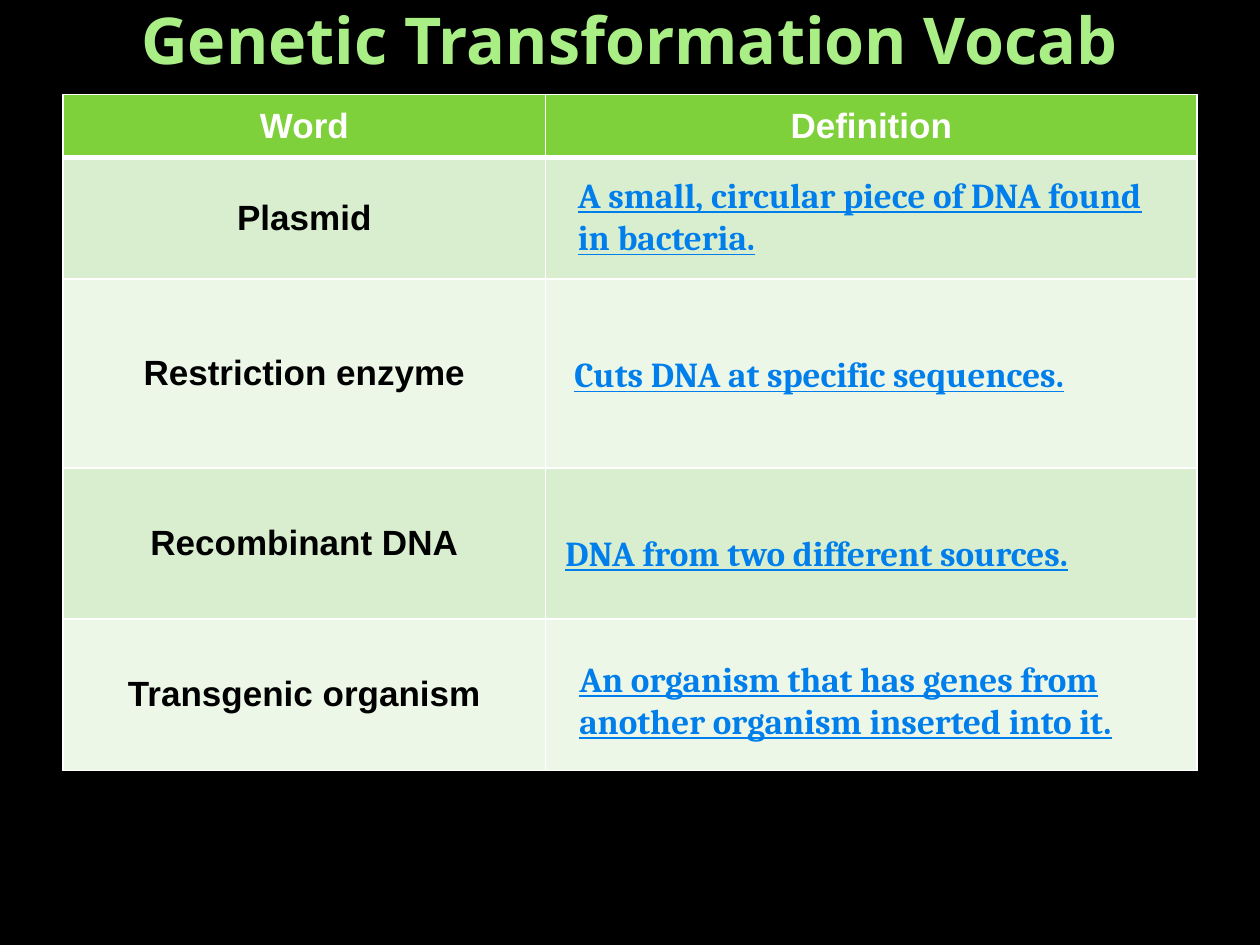
from pptx import Presentation
from pptx.dml.color import RGBColor
from pptx.enum.text import MSO_ANCHOR as Anchor, MSO_AUTO_SIZE as AutoSize, PP_ALIGN as Align
from pptx.oxml import parse_xml
from pptx.oxml.ns import nsdecls
from pptx.util import Cm, Pt

THEME = {
    "background": "000000", "title": "A9EF86", "header": "7FD13B",
    "bands": ["D8EECE", "ECF7E8"], "border": "FFFFFF",
    "header_text": "FFFFFF", "word_text": "000000", "definition_text": "007EEB",
    "title_size": 36.9, "text_size": 20, "border_width": 1, "header_rule": 3,
}
COLUMNS = [9.73, 13.13]
HEADINGS = ["Word", "Definition"]
VOCABULARY = [
    ("Plasmid", 2.44, "A small, circular piece of DNA found in bacteria.", (11.4, 3.38, 12.27, 1.96)),
    ("Restriction enzyme", 3.81, "Cuts DNA at specific sequences.", (11.33, 6.99, 12.7, 1.12)),
    ("Recombinant DNA", 3.05, "DNA from two different sources.", (11.15, 10.59, 12.7, 1.12)),
    ("Transgenic organism", 3.05, "An organism that has genes from another organism inserted into it.",
     (11.43, 13.13, 12.5, 1.96)),
]


def write(frame, text, color, font_format, paragraph_format):
    paragraph = frame.paragraphs[0]
    for name, value in paragraph_format.items():
        setattr(paragraph, name, value)
    run = paragraph.add_run()
    run.text = text
    for name, value in font_format.items():
        setattr(run.font, name, value)
    run.font.color.rgb = RGBColor.from_string(THEME[color])


def style_cell(cell, fill, bottom_width):
    cell_format = {"vertical_anchor": Anchor.MIDDLE, "margin_left": Cm(0.18),
                   "margin_right": Cm(0.18), "margin_top": 0, "margin_bottom": 0}
    for name, value in cell_format.items():
        setattr(cell, name, value)
    properties = cell._tc.get_or_add_tcPr()
    for side in "LRTB":
        width = Pt(bottom_width if side == "B" else THEME["border_width"])
        properties.append(parse_xml(
            f'<a:ln{side} {nsdecls("a")} w="{width}"><a:solidFill>'
            f'<a:srgbClr val="{THEME["border"]}"/></a:solidFill></a:ln{side}>'))
    cell.fill.solid()
    cell.fill.fore_color.rgb = RGBColor.from_string(fill)


presentation = Presentation()
presentation.slide_width, presentation.slide_height = Cm(25.4), Cm(19.05)
slide = presentation.slides.add_slide(presentation.slide_layouts[5])
slide.background.fill.solid()
slide.background.fill.fore_color.rgb = RGBColor.from_string(THEME["background"])

title = slide.shapes.title
title_position = {"left": Cm(1.27), "top": Cm(0), "width": Cm(22.86), "height": Cm(1.57)}
for name, value in title_position.items():
    setattr(title, name, value)
title_frame = {"vertical_anchor": Anchor.MIDDLE, "auto_size": AutoSize.NONE, "word_wrap": True}
for name, value in title_frame.items():
    setattr(title.text_frame, name, value)
write(title.text_frame, "Genetic Transformation Vocab", "title",
      {"name": "Noto Sans", "size": Pt(THEME["title_size"]), "bold": True},
      {"alignment": Align.CENTER})

row_heights = [1.27] + [height for _, height, _, _ in VOCABULARY]
table = slide.shapes.add_table(len(row_heights), len(COLUMNS), Cm(1.27), Cm(1.91),
                               Cm(sum(COLUMNS)), Cm(sum(row_heights))).table
for column, width in zip(table.columns, COLUMNS):
    column.width = Cm(width)

cell_font = {"name": "Arial", "size": Pt(THEME["text_size"]), "bold": True}
cell_paragraph = {"alignment": Align.CENTER, "space_after": Pt(6)}
for row_index, height in enumerate(row_heights):
    table.rows[row_index].height = Cm(height)
    is_header = row_index == 0
    fill = THEME["header"] if is_header else THEME["bands"][(row_index - 1) % 2]
    rule = THEME["header_rule"] if is_header else THEME["border_width"]
    texts = HEADINGS if is_header else [VOCABULARY[row_index - 1][0]]
    color = "header_text" if is_header else "word_text"
    for cell in table.rows[row_index].cells:
        style_cell(cell, fill, rule)
    for cell, text in zip(table.rows[row_index].cells, texts):
        write(cell.text_frame, text, color, cell_font, cell_paragraph)

definition_font = {"name": "Cambria", "size": Pt(THEME["text_size"]), "bold": True, "underline": True}
for _, _, definition, position in VOCABULARY:
    box = slide.shapes.add_textbox(*[Cm(length) for length in position])
    box.text_frame.word_wrap = True
    box.text_frame.auto_size = AutoSize.SHAPE_TO_FIT_TEXT
    write(box.text_frame, definition, "definition_text", definition_font, {"alignment": Align.LEFT})

presentation.save("out.pptx")
